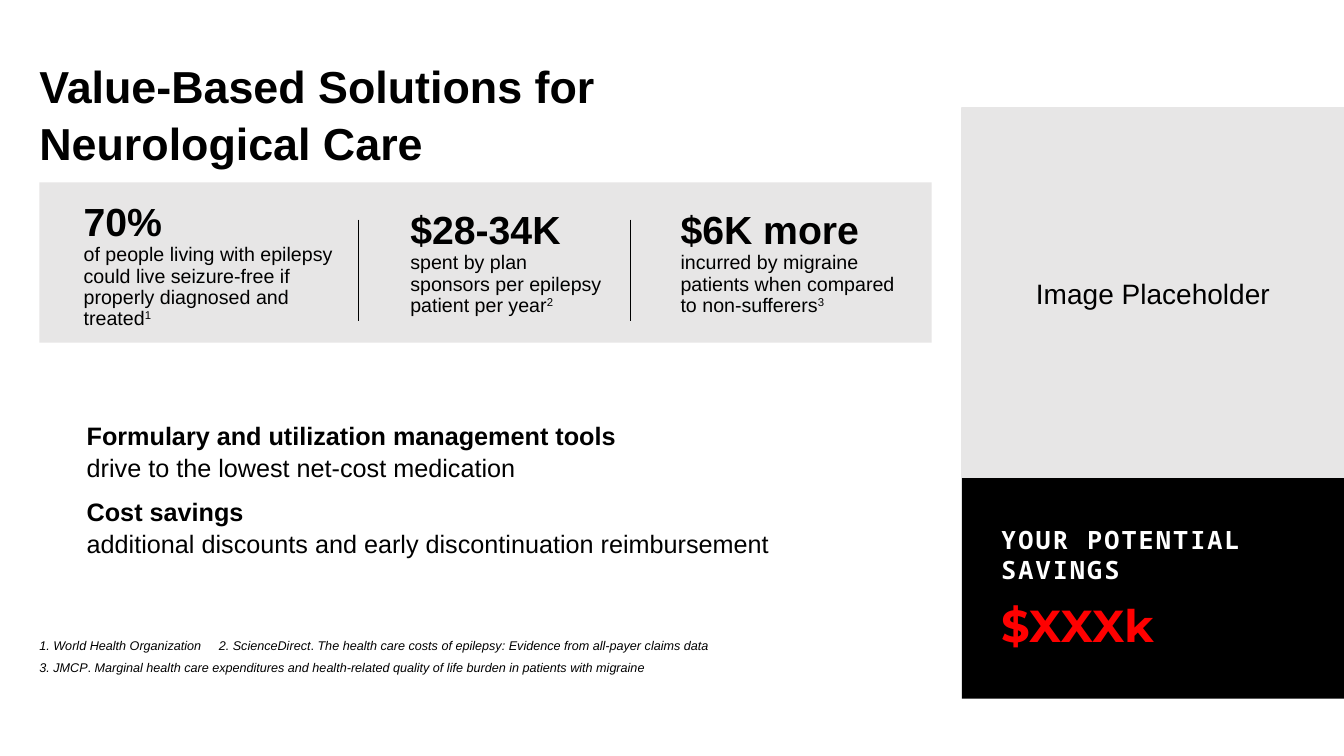
from dataclasses import dataclass

from lxml.etree import SubElement
from pptx import Presentation
from pptx.dml.color import RGBColor
from pptx.enum.shapes import MSO_CONNECTOR, MSO_SHAPE
from pptx.enum.text import MSO_ANCHOR, MSO_AUTO_SIZE, PP_ALIGN
from pptx.oxml.ns import qn
from pptx.util import Inches, Pt


@dataclass(frozen=True)
class Theme:
    font: str = "Arial"
    label_font: str = "Noto Sans Mono"
    amount_font: str = "Montserrat"
    ink: RGBColor = RGBColor(0, 0, 0)
    paper: RGBColor = RGBColor(255, 255, 255)
    panel: RGBColor = RGBColor(0xE7, 0xE6, 0xE6)
    accent: RGBColor = RGBColor(255, 0, 0)
    title: int = 32
    figure: int = 28
    caption: int = 20
    body: int = 18
    detail: int = 14
    note: int = 9


THEME = Theme()

# left offset in the band, top offset, width, height, figure, detail, reference
STATS = [
    (0.44, 0.20, 2.64, 1.27, "70%",
     "of people living with epilepsy could live seizure-free if "
     "properly diagnosed and treated", "1"),
    (3.68, 0.28, 1.96, 1.06, "$28-34K",
     "spent by plan sponsors per epilepsy patient per year", "2"),
    (6.36, 0.28, 2.30, 1.06, "$6K more",
     "incurred by migraine patients when compared to non-sufferers", "3"),
]
DIVIDERS = (3.16, 5.86)

BENEFITS = [
    ("Formulary and utilization management tools",
     "drive to the lowest net-cost medication"),
    ("Cost savings",
     "additional discounts and early discontinuation reimbursement"),
]

REFERENCES = [
    ("1. World Health Organization\t2. ScienceDirect",
     "The health care costs of epilepsy: Evidence from all-payer claims data"),
    ("3. JMCP",
     "Marginal health care expenditures and health-related quality of life "
     "burden in patients with migraine"),
]


def style(font, size, color=THEME.ink, name=THEME.font, bold=False):
    font.size, font.name, font.bold = Pt(size), name, bold
    font.color.rgb = color


def add_run(p, text):
    r = p.add_run()
    r.text = text
    return r


def set_margins(tf, left=0, top=0, right=0, bottom=0):
    tf.margin_left, tf.margin_top = Inches(left), Inches(top)
    tf.margin_right, tf.margin_bottom = Inches(right), Inches(bottom)


def add_text(s, x, y, w, h):
    """Add a wrapping text box without margins and return its frame."""
    tf = s.shapes.add_textbox(Inches(x), Inches(y), Inches(w), Inches(h)).text_frame
    tf.word_wrap = True
    set_margins(tf)
    return tf


def add_panel(s, x, y, w, h, color):
    sp = s.shapes.add_shape(MSO_SHAPE.RECTANGLE, Inches(x), Inches(y),
                            Inches(w), Inches(h))
    sp.shadow.inherit = False
    sp.fill.solid()
    sp.fill.fore_color.rgb = color
    sp.line.fill.background()
    return sp


def add_divider(s, x, top, bottom):
    line = s.shapes.add_connector(MSO_CONNECTOR.STRAIGHT, Inches(x), Inches(top),
                                  Inches(x), Inches(bottom))
    line.line.color.rgb = THEME.ink
    line.line.width = Pt(0.5)
    SubElement(line._element.spPr, qn("a:effectLst"))


def set_title(s, x, y, w, h):
    title = s.shapes.title
    title.left, title.top = Inches(x), Inches(y)
    title.width, title.height = Inches(w), Inches(h)
    tf = title.text_frame
    tf.text = "Value-Based Solutions for Neurological Care"
    tf.auto_size = MSO_AUTO_SIZE.NONE
    tf.vertical_anchor = MSO_ANCHOR.MIDDLE
    set_margins(tf)
    p = tf.paragraphs[0]
    p.alignment = PP_ALIGN.LEFT
    p.line_spacing = 1.05
    style(p.font, THEME.title, bold=True)


def add_stat_band(s, x, y, w, h):
    add_panel(s, x, y, w, h, THEME.panel)
    for dx in DIVIDERS:
        add_divider(s, x + dx, y + 0.37, y + 1.37)
    for dx, dy, width, height, figure, detail, ref in STATS:
        tf = add_text(s, x + dx, y + dy, width, height)
        p = tf.paragraphs[0]
        p.text = figure
        p.line_spacing = 0.9
        style(p.font, THEME.figure, bold=True)
        p = tf.add_paragraph()
        p.line_spacing = 0.9
        style(p.font, THEME.detail)
        add_run(p, detail)
        add_run(p, ref)._r.get_or_add_rPr().set("baseline", "30000")


def add_benefits(s, x, y, w, h, pitch):
    for i, (heading, detail) in enumerate(BENEFITS):
        tf = add_text(s, x, y + i * pitch, w, h)
        set_margins(tf, 0, 0.05, 0.1, 0.05)
        p = tf.paragraphs[0]
        p.line_spacing = 1.05
        style(p.font, THEME.body)
        add_run(p, heading).font.bold = True
        p.add_line_break()
        add_run(p, detail)


def add_image_panel(s, x, y, w, h):
    sp = add_panel(s, x, y, w, h, THEME.panel)
    sp.line.color.rgb = THEME.panel
    sp.line.width = Pt(1)
    tf = sp.text_frame
    tf.vertical_anchor = MSO_ANCHOR.MIDDLE
    set_margins(tf, 0.08, 0.04, 0.08, 0.04)
    p = tf.paragraphs[0]
    p.text = "Image Placeholder"
    p.alignment = PP_ALIGN.CENTER
    style(p.font, THEME.caption)


def add_savings_panel(s, x, y, w, h):
    add_panel(s, x, y, w, h, THEME.ink)
    tf = add_text(s, x + 0.39, y + 0.46, w - 0.77, h - 0.92)
    p = tf.paragraphs[0]
    p.space_after = Pt(6)
    r = add_run(p, "YOUR POTENTIAL SAVINGS")
    style(p.font, THEME.body, THEME.paper, THEME.label_font, True)
    r._r.get_or_add_rPr().set("spc", "150")
    p = tf.add_paragraph()
    p.text = "$XXXk"
    p.space_before = Pt(3)
    style(p.font, THEME.title, THEME.accent, THEME.amount_font, True)


def add_references(s, x, y, w, h):
    tf = add_text(s, x, y, w, h)
    tf.vertical_anchor = MSO_ANCHOR.BOTTOM
    for i, (source, study) in enumerate(REFERENCES):
        p = tf.add_paragraph() if i else tf.paragraphs[0]
        p.line_spacing = 1.2
        p.space_after = Pt(3)
        tabs = SubElement(p._p.get_or_add_pPr(), qn("a:tabLst"))
        SubElement(tabs, qn("a:tab"), pos=str(Inches(1.78)), algn="l")
        style(p.font, THEME.note)
        for text, italic in ((source, True), (". ", False), (study, True)):
            add_run(p, text).font.italic = italic


def main():
    prs = Presentation()
    prs.slide_width, prs.slide_height = Inches(13.33), Inches(7.5)
    s = prs.slides.add_slide(prs.slide_layouts[5])
    set_title(s, 0.39, 0.57, 8.3, 1.1)
    add_stat_band(s, 0.39, 1.81, 8.85, 1.59)
    add_benefits(s, 0.86, 4.11, 8.78, 0.71, pitch=0.75)
    add_savings_panel(s, 9.54, 4.74, 3.79, 2.19)
    add_image_panel(s, 9.54, 1.07, 3.79, 3.67)
    add_references(s, 0.39, 6.29, 12.55, 0.41)
    prs.save("out.pptx")


if __name__ == "__main__":
    main()
